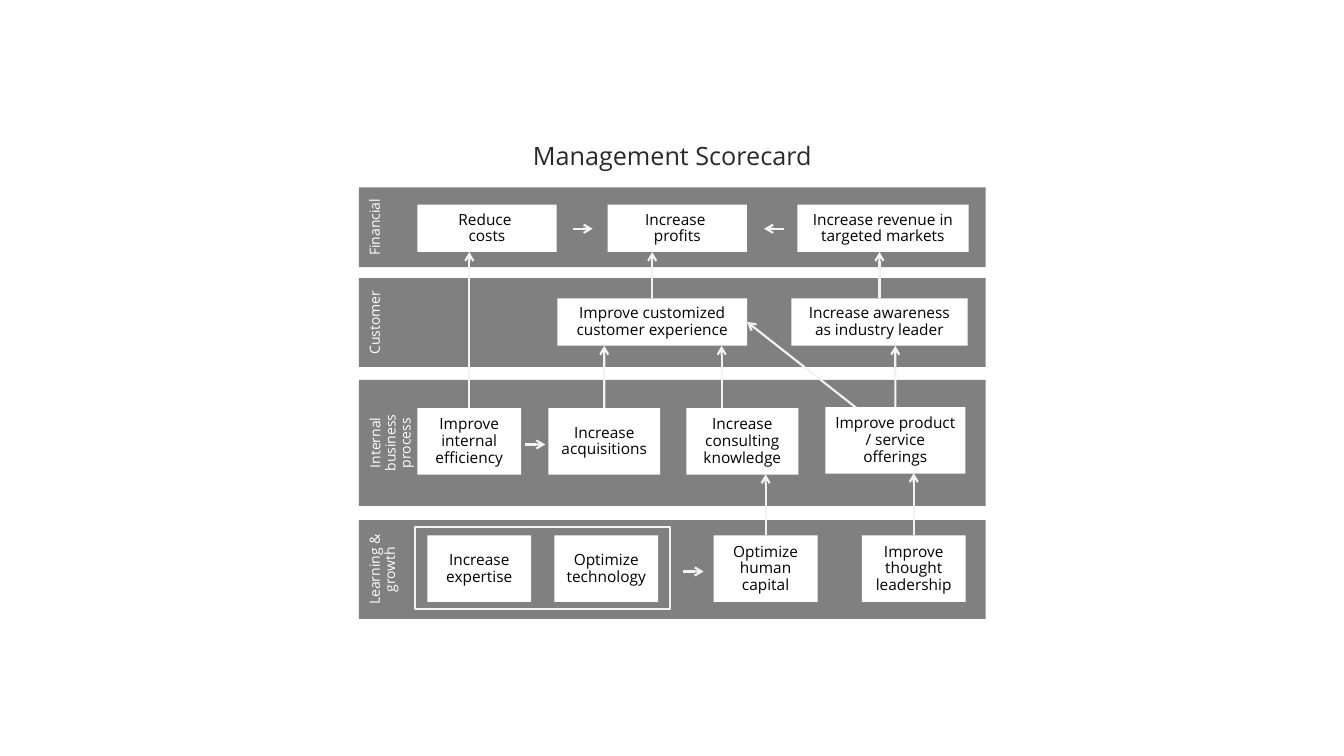
from dataclasses import dataclass

from lxml import etree
from pptx import Presentation
from pptx import util as u
from pptx.dml import color
from pptx.enum import shapes, text
from pptx.oxml import ns

FONT = "Open Sans"
GREY, WHITE, BLACK = "808080", "FFFFFF", "000000"
TITLE_COLOUR, LINE_COLOUR = "282832", "F3F3F4"
BAND_LEFT, BAND_WIDTH = 256.3, 447.8
TOP, RIGHT = 0, 3  # connection sites of a rectangle


@dataclass(frozen=True)
class Objective:
    text: str
    left: float
    width: float
    lift: float = 0


@dataclass(frozen=True)
class Perspective:
    name: str
    top: float
    height: float
    label_left: float
    label_width: float
    label_inset: float
    row_top: float
    row_height: float
    objectives: tuple[Objective, ...]


@dataclass(frozen=True)
class Arrow:
    start: tuple[float, float]
    end: tuple[float, float]
    source: str = ""  # objective whose top centre is the start
    target: str = ""  # objective whose right centre is the end


PERSPECTIVES = (
    Perspective("Financial", 133.9, 56.9, 259.2, 26.6, 7.2, 146.2, 33.8, (
        Objective("Reduce \ncosts", 298.1, 99.6),
        Objective("Increase \nprofits", 434, 99.6),
        Objective("Increase revenue in targeted markets", 569.5, 122.4))),
    Perspective("Customer", 198.7, 63.4, 259.2, 26.6, 7.2, 213.1, 33.8, (
        Objective("Improve customized customer experience", 398.2, 135.4),
        Objective("Increase awareness as industry leader", 565.2, 126))),
    Perspective("Internal business process", 271.4, 90, 257.8, 38.9, 1.1, 291.6, 47.5, (
        Objective("Improve internal efficiency", 298.1, 74.2),
        Objective("Increase acquisitions", 391.7, 79.9),
        Objective("Increase consulting knowledge", 490.3, 79.9),
        Objective("Improve product / service offerings", 589.5, 100.1, 0.7))),
    Perspective("Learning & growth", 371.5, 70.6, 259.2, 38.9, 7.2, 382.5, 47.5, (
        Objective("Increase expertise", 305.3, 74.2),
        Objective("Optimize technology", 396, 74.2),
        Objective("Optimize human capital", 509.8, 74.2),
        Objective("Improve thought leadership", 615.6, 74.2))),
)

ARROWS = (
    Arrow((375.1, 317.5), (389.5, 317.5)),
    Arrow((488.2, 408.2), (502.6, 408.2)),
    Arrow((409, 163.4), (423.4, 163.4)),
    Arrow((560.2, 163.4), (545.8, 163.4)),
    Arrow((335.2, 291.6), (335.2, 180), "Improve internal efficiency"),
    Arrow((465.9, 213.1), (465.9, 180), "Improve customized customer experience"),
    Arrow((628.2, 213.1), (628.2, 180), "Increase awareness as industry leader"),
    Arrow((639.5, 290.9), (639.5, 247), "Improve product / service offerings"),
    Arrow((515.5, 291.6), (515.5, 247)),
    Arrow((431.6, 291.6), (431.6, 247), "Increase acquisitions"),
    Arrow((546.9, 382.5), (546.9, 338.8), "Optimize human capital"),
    Arrow((652.7, 382.5), (652.7, 338), "Improve thought leadership"),
    Arrow((612, 291.6), (533.6, 230), target="Improve customized customer experience"),
)


def rgb(value: str) -> color.RGBColor:
    return color.RGBColor.from_string(value)


def points(*lengths: float) -> list[u.Length]:
    return [u.Pt(length) for length in lengths]


def write(shape, wording: str, size: float, colour: str,
          inset_x: float = 7.2, inset_y: float = 3.6) -> None:
    frame = shape.text_frame
    frame.word_wrap = True
    frame.auto_size = text.MSO_AUTO_SIZE.NONE
    frame.vertical_anchor = text.MSO_ANCHOR.MIDDLE
    frame.margin_left = frame.margin_right = u.Pt(inset_x)
    frame.margin_top = frame.margin_bottom = u.Pt(inset_y)
    paragraph = frame.paragraphs[0]
    paragraph.alignment = text.PP_ALIGN.CENTER
    paragraph.line_spacing = 0.9
    for index, line in enumerate(wording.split("\n")):
        if index:
            paragraph.add_line_break()
        run = paragraph.add_run()
        run.text = line
        run.font.name = FONT
        run.font.size = u.Pt(size)
        run.font.color.rgb = rgb(colour)


def add_rectangle(slide, left: float, top: float, width: float, height: float,
                  fill: str = "", outline: str = ""):
    rectangle = slide.shapes.add_shape(
        shapes.MSO_SHAPE.RECTANGLE, *points(left, top, width, height))
    rectangle.shadow.inherit = False
    if fill:
        rectangle.fill.solid()
        rectangle.fill.fore_color.rgb = rgb(fill)
    else:
        rectangle.fill.background()
    if outline:
        rectangle.line.color.rgb = rgb(outline)
        rectangle.line.width = u.Pt(1.5)
    else:
        rectangle.line.fill.background()
    return rectangle


def add_perspective(slide, band: Perspective) -> dict:
    add_rectangle(slide, BAND_LEFT, band.top, BAND_WIDTH, band.height, GREY)
    label = slide.shapes.add_textbox(
        *points(band.label_left, band.top, band.label_width, band.height))
    write(label, band.name, 10, WHITE, band.label_inset,
          12 if band.label_inset < 7 else 3.6)
    label.element.txBody.bodyPr.set("vert", "vert270")
    if band.label_inset < 7:
        label.text_frame.vertical_anchor = text.MSO_ANCHOR.BOTTOM
    else:
        label.text_frame.vertical_anchor = text.MSO_ANCHOR.TOP

    boxes = {}
    for objective in band.objectives:
        box = add_rectangle(slide, objective.left, band.row_top - objective.lift,
                            objective.width, band.row_height, WHITE)
        write(box, objective.text, 11, BLACK, inset_x=6.5)
        boxes[objective.text] = box
    return boxes


def add_arrow(slide, arrow: Arrow, boxes: dict) -> None:
    connector = slide.shapes.add_connector(
        shapes.MSO_CONNECTOR.STRAIGHT, *points(*arrow.start, *arrow.end))
    if arrow.source:
        connector.begin_connect(boxes[arrow.source], TOP)
    if arrow.target:
        connector.end_connect(boxes[arrow.target], RIGHT)
    connector.line.color.rgb = rgb(LINE_COLOUR)
    connector.line.width = u.Pt(1.5)
    properties = connector.element.spPr
    etree.SubElement(properties.find(ns.qn("a:ln")), ns.qn("a:tailEnd"), type="arrow")
    etree.SubElement(properties, ns.qn("a:effectLst"))


def main() -> None:
    presentation = Presentation()
    presentation.slide_width, presentation.slide_height = points(960, 540)
    slide = presentation.slides.add_slide(presentation.slide_layouts[5])

    # Title
    title = slide.shapes.title
    title.left, title.top, title.width, title.height = points(
        BAND_LEFT, 97.9, BAND_WIDTH, 29.2)
    write(title, "Management Scorecard", 18, TITLE_COLOUR)

    # Perspectives with their objectives
    boxes = {}
    for band in PERSPECTIVES:
        boxes.update(add_perspective(slide, band))

    # Frame around expertise and technology
    add_rectangle(slide, 296.6, 376.6, 182.2, 58.3, outline=LINE_COLOUR)

    # Cause and effect
    for arrow in ARROWS:
        add_arrow(slide, arrow, boxes)

    presentation.save("out.pptx")


if __name__ == "__main__":
    main()
